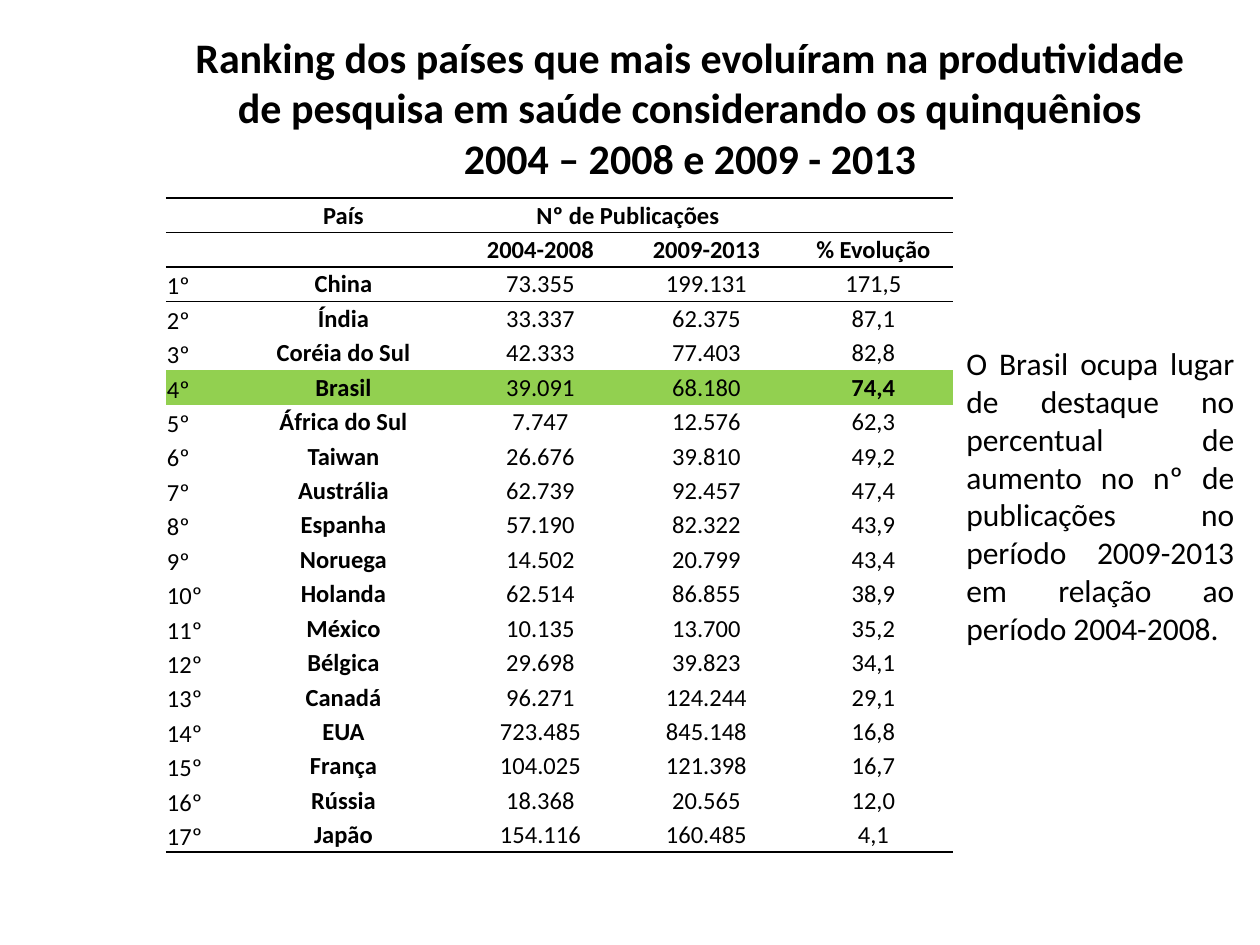
import lxml.etree
import pptx
import pptx.dml.color
import pptx.enum.text
import pptx.oxml.ns
import pptx.util

PX = 914400 // 126
FONT = "Calibri"
BLACK = pptx.dml.color.RGBColor(0x00, 0x00, 0x00)
GREEN = pptx.dml.color.RGBColor(0x92, 0xD0, 0x50)
ALIGN = pptx.enum.text.PP_ALIGN
ANCHOR = pptx.enum.text.MSO_ANCHOR
NO_GRID_STYLE = "{2D5ABB26-0587-4C30-8999-92F81FD0307C}"

TITLE = (
    "Ranking dos países que mais evoluíram na produtividade "
    "de pesquisa em saúde considerando os quinquênios\v2004 – 2008 e 2009 - 2013"
)
COMMENT = (
    "O Brasil ocupa lugar de destaque no percentual de aumento no nº de "
    "publicações no período 2009-2013 em relação ao período 2004-2008."
)
HEADERS = [
    ("", "País", "Nº de Publicações", "", ""),
    ("", "", "2004-2008", "2009-2013", "% Evolução"),
]
COUNTRIES = [
    ("China", "73.355", "199.131", "171,5"),
    ("Índia", "33.337", "62.375", "87,1"),
    ("Coréia do Sul", "42.333", "77.403", "82,8"),
    ("Brasil", "39.091", "68.180", "74,4"),
    ("África do Sul", "7.747", "12.576", "62,3"),
    ("Taiwan", "26.676", "39.810", "49,2"),
    ("Austrália", "62.739", "92.457", "47,4"),
    ("Espanha", "57.190", "82.322", "43,9"),
    ("Noruega", "14.502", "20.799", "43,4"),
    ("Holanda", "62.514", "86.855", "38,9"),
    ("México", "10.135", "13.700", "35,2"),
    ("Bélgica", "29.698", "39.823", "34,1"),
    ("Canadá", "96.271", "124.244", "29,1"),
    ("EUA", "723.485", "845.148", "16,8"),
    ("França", "104.025", "121.398", "16,7"),
    ("Rússia", "18.368", "20.565", "12,0"),
    ("Japão", "154.116", "160.485", "4,1"),
]
HIGHLIGHT = "Brasil"
COLUMN_WIDTHS = [59, 237, 157, 175, 159]


def px(value):
    return pptx.util.Emu(value * PX)


def style_paragraph(paragraph, size, bold, alignment):
    paragraph.alignment = alignment
    font = paragraph.font
    font.name = FONT
    font.size = pptx.util.Pt(size)
    font.bold = bold
    font.color.rgb = BLACK


def add_text(slide, box, text, size, bold, alignment):
    shape = slide.shapes.add_textbox(*map(px, box))
    frame = shape.text_frame
    frame.word_wrap = True
    frame.text = text
    style_paragraph(frame.paragraphs[0], size, bold, alignment)


def add_border(cell, side):
    properties = cell._tc.get_or_add_tcPr()
    tag = pptx.oxml.ns.qn
    line = lxml.etree.SubElement(properties, tag(f"a:ln{side}"), w=str(pptx.util.Pt(1)))
    fill = lxml.etree.SubElement(line, tag("a:solidFill"))
    lxml.etree.SubElement(fill, tag("a:srgbClr"), val=str(BLACK))


def fill_cell(cell, text, bold, is_rank, borders, highlighted):
    cell.margin_left = cell.margin_right = cell.margin_top = px(1)
    cell.margin_bottom = 0
    cell.vertical_anchor = ANCHOR.BOTTOM if is_rank else ANCHOR.MIDDLE
    cell.text = text
    paragraph = cell.text_frame.paragraphs[0]
    style_paragraph(paragraph, 14, bold, ALIGN.LEFT if is_rank else ALIGN.CENTER)
    if not text:
        end = pptx.oxml.ns.qn("a:endParaRPr")
        lxml.etree.SubElement(paragraph._p, end, sz="1400")
    for side in borders:
        add_border(cell, side)
    if highlighted:
        cell.fill.solid()
        cell.fill.fore_color.rgb = GREEN
    else:
        cell.fill.background()


def add_ranking(slide):
    ranked = [(f"{rank}º", *country) for rank, country in enumerate(COUNTRIES, 1)]
    rows = HEADERS + ranked
    box = (166, 198, sum(COLUMN_WIDTHS), 655)
    frame = slide.shapes.add_table(len(rows), len(COLUMN_WIDTHS), *map(px, box))
    table = frame.table
    table.first_row = table.horz_banding = False
    table._tbl.tblPr.find(pptx.oxml.ns.qn("a:tableStyleId")).text = NO_GRID_STYLE
    for column, width in zip(table.columns, COLUMN_WIDTHS):
        column.width = px(width)
    for row_index, values in enumerate(rows):
        table.rows[row_index].height = px(box[3]) // len(rows)
        is_header = row_index < len(HEADERS)
        highlighted = values[1] == HIGHLIGHT
        borders = "T" if row_index <= len(HEADERS) else ""
        if is_header or row_index == len(rows) - 1:
            borders += "B"
        for column_index, text in enumerate(values):
            bold = is_header or column_index == 1 or (highlighted and column_index == 4)
            is_rank = column_index == 0 and not is_header
            cell = table.cell(row_index, column_index)
            fill_cell(cell, text, bold, is_rank, borders, highlighted)
    table.cell(0, 2).merge(table.cell(0, 3))


def main():
    presentation = pptx.Presentation()
    presentation.slide_width = px(1260)
    presentation.slide_height = px(945)
    slide = presentation.slides.add_slide(presentation.slide_layouts[6])
    add_text(slide, (176, 25, 1028, 108), TITLE, 24, True, ALIGN.CENTER)
    add_ranking(slide)
    add_text(slide, (954, 338, 293, 318), COMMENT, 18, False, ALIGN.JUSTIFY)
    presentation.save("out.pptx")


if __name__ == "__main__":
    main()
